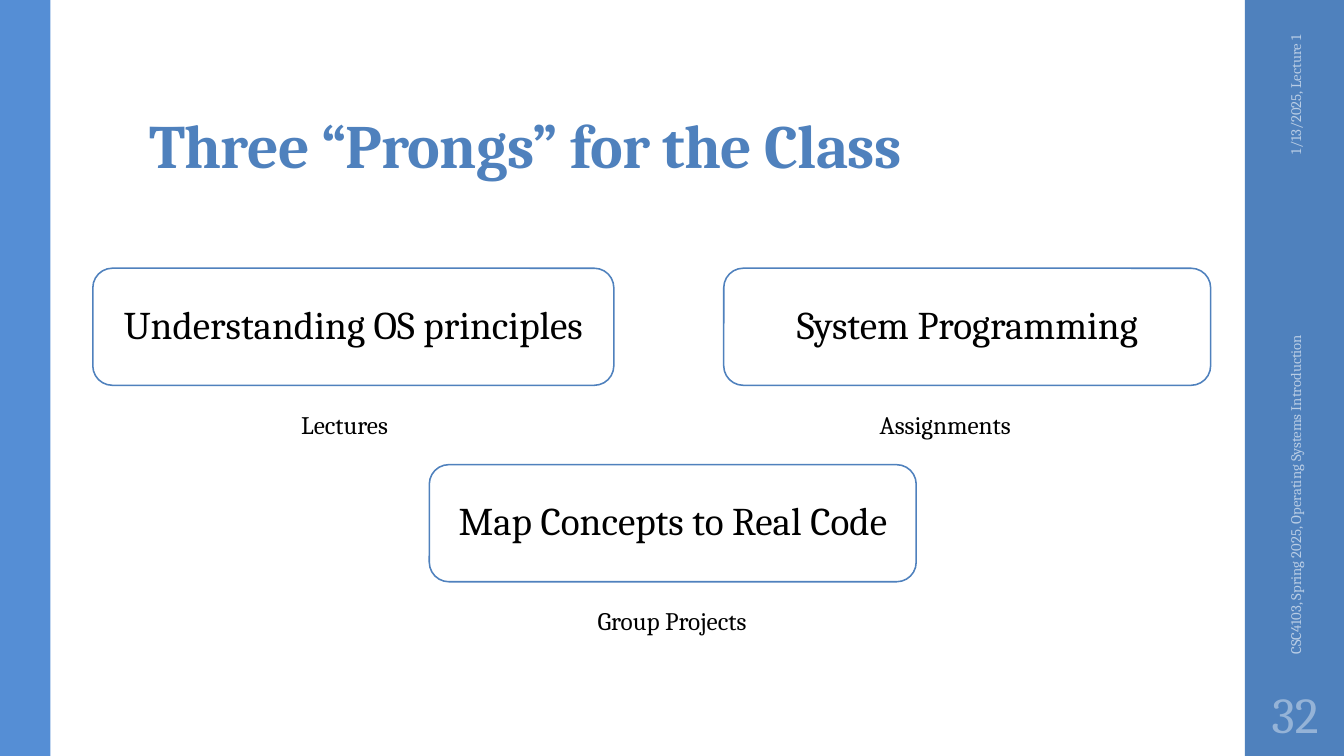
from pptx import Presentation
from pptx import util as u
from pptx.dml.color import RGBColor
from pptx.enum import shapes, text

BLUE = RGBColor(0x4F, 0x81, 0xBD)
LIGHT_BLUE = RGBColor(0x55, 0x8E, 0xD5)
FOOTER_BLUE = RGBColor(0xB9, 0xCD, 0xE5)
NUMBER_BLUE = RGBColor(0x95, 0xB3, 0xD7)
WHITE = RGBColor(0xFF, 0xFF, 0xFF)
BLACK = RGBColor(0, 0, 0)
LEFT, CENTER, RIGHT = text.PP_ALIGN.LEFT, text.PP_ALIGN.CENTER, text.PP_ALIGN.RIGHT

presentation = Presentation()
presentation.slide_width = u.Cm(33.87)
presentation.slide_height = u.Cm(19.05)
slide = presentation.slides.add_slide(presentation.slide_layouts[6])


def add_panel(kind, left, top, width, height, fill):
    shape = slide.shapes.add_shape(kind, u.Cm(left), u.Cm(top), u.Cm(width), u.Cm(height))
    shape.shadow.inherit = False
    shape.fill.solid()
    shape.fill.fore_color.rgb = fill
    shape.line.fill.background()
    return shape


def write(shape, words, size, color, align=LEFT, anchor=text.MSO_ANCHOR.MIDDLE):
    frame = shape.text_frame
    frame.word_wrap = True
    frame.vertical_anchor = anchor
    paragraph = frame.paragraphs[0]
    paragraph.alignment = align
    run = paragraph.add_run()
    run.text = words
    run.font.name = "Cambria"
    run.font.size = u.Pt(size)
    run.font.color.rgb = color
    return paragraph


# Side bars
add_panel(shapes.MSO_SHAPE.RECTANGLE, 31.37, 0, 2.5, 19.05, BLUE)
add_panel(shapes.MSO_SHAPE.RECTANGLE, 0, 0, 1.27, 19.05, LIGHT_BLUE)

# Title
title = slide.shapes.add_textbox(u.Cm(3.51), u.Cm(0.81), u.Cm(26.92), u.Cm(3.89))
title.text_frame.margin_top = u.Cm(0.08)
paragraph = write(title, "Three “Prongs” for the Class", 44, BLUE,
                  anchor=text.MSO_ANCHOR.BOTTOM)
paragraph.line_spacing = 0.9
paragraph.runs[0].font.bold = True
paragraph.runs[0]._r.get_or_add_rPr().set("spc", "-50")

# Prongs: box, with the caption below it
prongs = [
    ("Understanding OS principles", 2.34, 6.76, 13.13, "Lectures", 7.34, 3.1),
    ("System Programming", 18.24, 6.76, 12.27, "Assignments", 21.92, 4.34),
    ("Map Concepts to Real Code", 10.82, 11.71, 12.27, "Group Projects", 14.81, 4.93),
]
for topic, left, top, width, activity, caption_left, caption_width in prongs:
    box = add_panel(shapes.MSO_SHAPE.ROUNDED_RECTANGLE, left, top, width, 2.95, WHITE)
    box.line.color.rgb = BLUE
    box.line.width = u.Pt(1.1)
    write(box, topic, 28, BLACK, CENTER).line_spacing = 0.9

    caption = slide.shapes.add_textbox(
        u.Cm(caption_left), u.Cm(top + 3.43), u.Cm(caption_width), u.Cm(1.02))
    write(caption, activity, 18, BLACK, anchor=text.MSO_ANCHOR.TOP)

# Date and footer, reading upwards in the right bar
for words, left, top, width, align in [
    ("1/13/2025, Lecture 1", 30, 2.77, 5.28, RIGHT),
    ("CSC4103, Spring 2025, Operating Systems Introduction", 27.66, 11.25, 9.96, LEFT),
]:
    footer = slide.shapes.add_textbox(u.Cm(left), u.Cm(top), u.Cm(width), u.Cm(1.02))
    footer.rotation = 270
    write(footer, words, 10.5, FOOTER_BLUE, align)

# Slide number
number = slide.shapes.add_textbox(u.Cm(31.37), u.Cm(17.15), u.Cm(2.54), u.Cm(1.65))
number.text_frame.margin_left = number.text_frame.margin_right = u.Cm(0.13)
write(number, "32", 36, NUMBER_BLUE, CENTER)

presentation.save("out.pptx")
